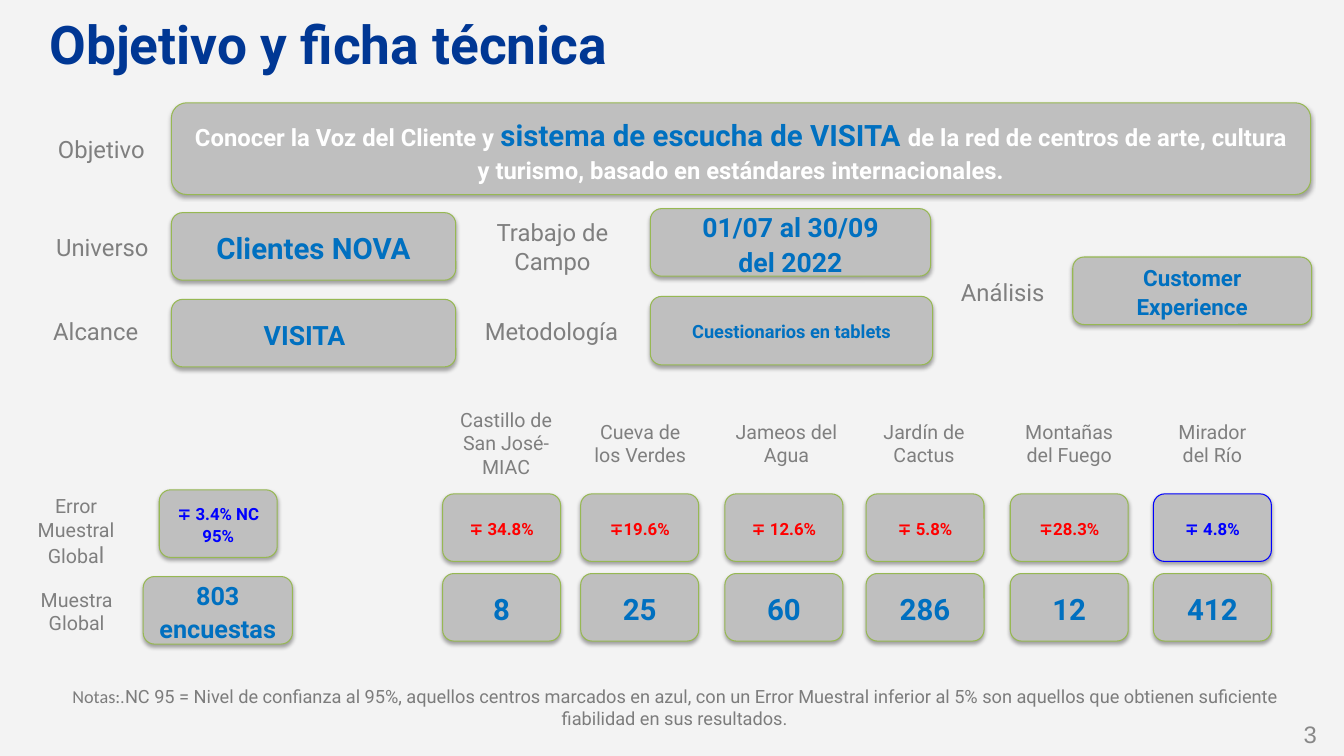
from lxml.etree import SubElement
from pptx import Presentation
from pptx.dml.color import RGBColor
from pptx.enum.shapes import MSO_SHAPE
from pptx.enum.text import MSO_ANCHOR, PP_ALIGN
from pptx.oxml.ns import qn
from pptx.util import Inches, Pt

COLORS = {
    "background": "F3F3F3", "title": "003794", "label": "7F7F7F", "note": "7C7C7C",
    "number": "888888", "box": "BFBFBF", "border": "97B853", "shadow": "000000",
    "white": "FFFFFF", "accent": "0070C0", "reliable": "0000FF", "unreliable": "FF0000",
}

TITLE = "Objetivo y ficha técnica"
GOAL = [[
    ("Conocer la Voz del Cliente y ", {}),
    ("sistema de escucha de VISITA ", {"size": 21, "color": "accent"}),
    ("de la red de centros de arte, cultura y turismo, basado en estándares internacionales.", {}),
]]
NOTE = [[
    ("Notas:", {"font": "Calibri"}),
    (".NC 95 = Nivel de confianza al 95%, aquellos centros marcados en azul, con un Error "
     "Muestral inferior al 5% son aquellos que obtienen suficiente fiabilidad en sus resultados.", {}),
]]
PAGE = "3"

LABELS = [
    ("Objetivo", (0.31, 1.27, 1.39, 0.41), 17),
    ("Universo", (0.32, 2.24, 1.39, 0.41), 17),
    ("Alcance", (0.22, 3.08, 1.46, 0.41), 17),
    (["Trabajo de", "Campo"], (4.53, 2.1, 1.9, 0.69), 17),
    ("Metodología", (4.52, 3.08, 1.9, 0.41), 17),
    ("Análisis", (9.25, 2.69, 1.39, 0.41), 17),
    (["Error", [("Muestral Globa", {}), ("l", {"size": 16})]], (0, 4.84, 1.51, 0.86), 14),
    ("Muestra Global", (-0.01, 5.77, 1.54, 0.59), 14),
]
FACTS = [
    (GOAL, (1.7, 1.02, 11.3, 0.91), 17, "white", 0),
    ("Clientes NOVA", (1.7, 2.11, 2.82, 0.67), 21, "accent", 0),
    ("VISITA", (1.7, 2.97, 2.82, 0.67), 19, "accent", 0.18),
    (["01/07 al 30/09", "del 2022"], (6.45, 2.07, 2.78, 0.67), 19, "accent", 0),
    ("Cuestionarios en tablets", (6.45, 2.94, 2.8, 0.68), 13, "accent", 0),
    ("Customer Experience", (10.64, 2.55, 2.37, 0.67), 16, "accent", 0),
    ("∓ 3.4% NC 95%", (1.58, 4.86, 1.17, 0.67), 12, "reliable", 0),
    (["803", "encuestas"], (1.42, 5.72, 1.48, 0.67), 18, "accent", 0),
]
CENTERS = [
    ("Castillo de San José-MIAC", 4.27, 1.5, 4.39, "∓ 34.8%", "8"),
    ("Cueva de los Verdes", 5.77, 1.16, 5.76, "∓19.6%", "25"),
    ("Jameos del Agua", 7.09, 1.42, 7.19, "∓ 12.6%", "60"),
    ("Jardín de Cactus", 8.44, 1.45, 8.59, "∓ 5.8%", "286"),
    ("Montañas del Fuego", 10.02, 1.17, 10.02, "∓28.3%", "12"),
    ("Mirador del Río", 11.44, 1.17, 11.44, "∓ 4.8%", "412"),
]
RELIABLE_ERRORS = {"∓ 4.8%"}
BOX_WIDTH, BOX_HEIGHT = 1.17, 0.67
NAME_TOP, NAME_HEIGHT, ERROR_TOP, SAMPLE_TOP = 4.04, 0.71, 4.9, 5.69


def rgb(name):
    return RGBColor.from_string(COLORS[name])


def write(shape, text, size=14, color="label", font="Roboto", bold=False,
          align=PP_ALIGN.CENTER, anchor=MSO_ANCHOR.MIDDLE, spacing=None,
          inset=(0.12, 0.06, 0.12, 0.06)):
    frame = shape.text_frame
    frame.word_wrap = True
    frame.vertical_anchor = anchor
    (frame.margin_left, frame.margin_top,
     frame.margin_right, frame.margin_bottom) = map(Inches, inset)
    lines = [text] if isinstance(text, str) else text
    for index, line in enumerate(lines):
        paragraph = frame.add_paragraph() if index else frame.paragraphs[0]
        paragraph.alignment = align
        if spacing:
            paragraph.line_spacing = spacing
        for words, change in [(line, {})] if isinstance(line, str) else line:
            run = paragraph.add_run()
            run.text = words
            run.font.size = Pt(change.get("size", size))
            run.font.name = change.get("font", font)
            run.font.bold = bold
            run.font.color.rgb = rgb(change.get("color", color))


def add_text(slide, text, place, **style):
    write(slide.shapes.add_textbox(*map(Inches, place)), text, **style)


def add_box(slide, text, place, size, color, border="border", shift=0):
    box = slide.shapes.add_shape(MSO_SHAPE.ROUNDED_RECTANGLE, *map(Inches, place))
    box.adjustments[0] = 0.167
    box.fill.solid()
    box.fill.fore_color.rgb = rgb("box")
    box.line.color.rgb = rgb(border)
    box.line.width = Pt(0.75)
    box.shadow.inherit = False
    effects = box._element.spPr.find(qn("a:effectLst"))
    shadow = SubElement(effects, qn("a:outerShdw"), blurRad=str(Pt(3.1)),
                        dist=str(Pt(1.8)), dir="5400000", rotWithShape="0")
    tint = SubElement(shadow, qn("a:srgbClr"), val=COLORS["shadow"])
    SubElement(tint, qn("a:alpha"), val="35000")
    write(box, text, size=size, color=color, bold=True, spacing=1.1,
          inset=(0.12, 0.06, 0.12 + shift, 0.06))


def main():
    """Build the slide with the goal and the technical data of the survey."""
    deck = Presentation()
    deck.slide_width, deck.slide_height = Inches(13.33), Inches(7.5)
    slide = deck.slides.add_slide(deck.slide_layouts[6])
    slide.background.fill.solid()
    slide.background.fill.fore_color.rgb = rgb("background")

    add_text(slide, TITLE, (0.37, 0.02, 12.52, 0.82), size=38, color="title",
             bold=True, align=PP_ALIGN.LEFT)
    for text, place, size in LABELS:
        add_text(slide, text, place, size=size)
    for text, place, size, color, shift in FACTS:
        add_box(slide, text, place, size, color, shift=shift)

    for name, name_left, name_width, left, error, sample in CENTERS:
        reliable = error in RELIABLE_ERRORS
        add_text(slide, name, (name_left, NAME_TOP, name_width, NAME_HEIGHT))
        add_box(slide, error, (left, ERROR_TOP, BOX_WIDTH, BOX_HEIGHT), 12,
                "reliable" if reliable else "unreliable",
                border="reliable" if reliable else "border")
        add_box(slide, sample, (left, SAMPLE_TOP, BOX_WIDTH, BOX_HEIGHT), 21, "accent")

    add_text(slide, NOTE, (0.37, 6.74, 12.64, 0.78), size=13, color="note",
             anchor=MSO_ANCHOR.TOP)
    add_text(slide, PAGE, (10.73, 7.09, 2.33, 0.39), size=17, color="number",
             font="Arial", align=PP_ALIGN.RIGHT, inset=(0, 0, 0, 0))
    deck.save("out.pptx")


if __name__ == "__main__":
    main()
